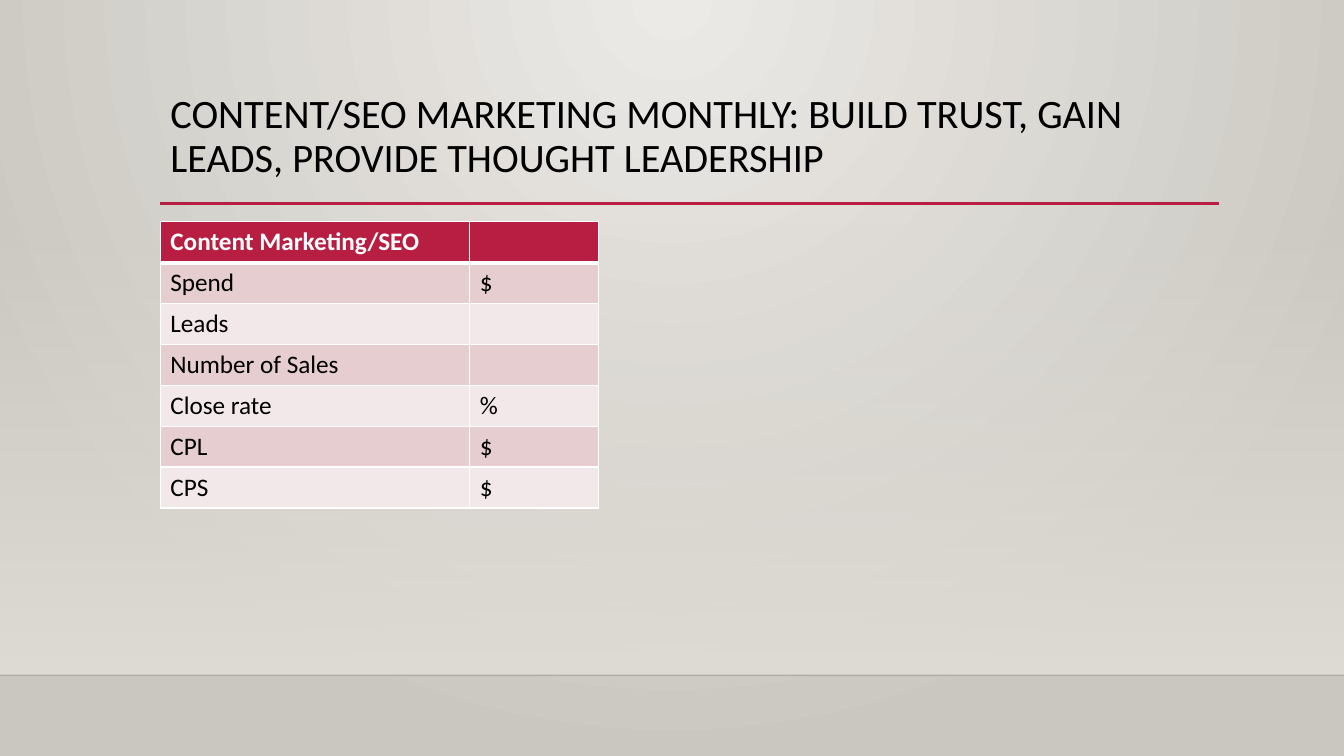
from dataclasses import dataclass

from lxml import etree
from pptx import Presentation
from pptx.dml.color import RGBColor as RGB
from pptx.enum.shapes import MSO_CONNECTOR as CONNECTOR, MSO_SHAPE as SHAPE
from pptx.enum.text import MSO_ANCHOR as ANCHOR, MSO_AUTO_SIZE as AUTO_SIZE, PP_ALIGN as ALIGN
from pptx.oxml.ns import qn
from pptx.util import Cm, Pt


@dataclass(frozen=True)
class Theme:
    font: str = "Calibri"
    title_size: float = 28.8
    table_size: float = 18
    text: str = "000000"
    white: str = "FFFFFF"
    accent: str = "B71E42"
    bands: tuple = ("F3E8E9", "E6CDCF")
    glow: str = "ECEAE7"
    edge: str = "CAC7C1"
    wall: str = "DFDBD5"
    floor_line: str = "000001"


THEME = Theme()


def set_gradient(fill, *colors):
    fill.gradient()
    for stop, color, position in zip(fill.gradient_stops, colors, (0, 1)):
        stop.color.rgb = RGB.from_string(color)
        stop.position = position


def set_alpha(element, percent):
    """Make the first colour inside element partly transparent."""
    color = next(element.iter(qn("a:srgbClr")))
    etree.SubElement(color, qn("a:alpha"), val=str(percent * 1000))


prs = Presentation()
prs.slide_width, prs.slide_height = Cm(33.87), Cm(19.05)
s = prs.slides.add_slide(prs.slide_layouts[5])

# Background: a glow from the top centre
set_gradient(s.background.fill, THEME.glow, THEME.edge)
grad = next(s.element.iter(qn("a:gradFill")))
grad.remove(grad.find(qn("a:lin")))
path = etree.SubElement(grad, qn("a:path"), path="circle")
etree.SubElement(path, qn("a:fillToRect"), l="43000", t="0", r="43000", b="100000")

# Wall fading in towards the floor
wall = s.shapes.add_shape(SHAPE.RECTANGLE, 0, Cm(5.61), prs.slide_width, Cm(11.41))
wall.shadow.inherit = False
wall.line.fill.background()
set_gradient(wall.fill, THEME.wall, THEME.wall)
wall.fill.gradient_angle = 270
set_alpha(wall.element.spPr, 0)

# Floor line and title rule
for x1, x2, y, color, width, alpha in (
    (0, 33.87, 17.02, THEME.floor_line, 1, 20),
    (4.04, 30.73, 5.13, THEME.accent, 2.5, 100),
):
    rule = s.shapes.add_connector(CONNECTOR.STRAIGHT, Cm(x1), Cm(y), Cm(x2), Cm(y))
    rule.line.color.rgb = RGB.from_string(color)
    rule.line.width = Pt(width)
    set_alpha(rule.element.spPr, alpha)
    etree.SubElement(rule.element.spPr, qn("a:effectLst"))

# Title
title = s.shapes.title
title.element.getparent().append(title.element)
title.left, title.top, title.width, title.height = Cm(4.04), Cm(2.24), Cm(26.67), Cm(2.92)
tf = title.text_frame
tf.text = "CONTENT/SEO MARKETING MONTHLY: BUILD TRUST, GAIN LEADS, PROVIDE THOUGHT LEADERSHIP"
tf.word_wrap = True
tf.auto_size = AUTO_SIZE.NONE
tf.vertical_anchor = ANCHOR.TOP
p = tf.paragraphs[0]
p.alignment = ALIGN.LEFT
p.line_spacing = 0.9
p.font.name, p.font.size = THEME.font, Pt(THEME.title_size)
p.font.color.rgb = RGB.from_string(THEME.text)

# Monthly figures
ROWS = (
    ("Content Marketing/SEO", ""),
    ("Spend", "$"),
    ("Leads", ""),
    ("Number of Sales", ""),
    ("Close rate", "%"),
    ("CPL", "$"),
    ("CPS", "$"),
)
COLUMN_WIDTHS = (7.8, 3.24)
ROW_HEIGHT = 1.03
table = s.shapes.add_table(
    len(ROWS), len(COLUMN_WIDTHS), Cm(4.04), Cm(5.59),
    Cm(sum(COLUMN_WIDTHS)), Cm(ROW_HEIGHT * len(ROWS)),
).table
for column, width in zip(table.columns, COLUMN_WIDTHS):
    column.width = Cm(width)

for i, row in enumerate(ROWS):
    header = i == 0
    fill = THEME.accent if header else THEME.bands[i % 2]
    table.rows[i].height = Cm(ROW_HEIGHT)
    for j, text in enumerate(row):
        cell = table.cell(i, j)
        tcPr = cell._tc.get_or_add_tcPr()
        for side in "LRTB":
            thick = (header and side == "B") or (i == 1 and side == "T")
            ln = etree.SubElement(tcPr, qn(f"a:ln{side}"), w=str(Pt(3 if thick else 1)))
            solid = etree.SubElement(ln, qn("a:solidFill"))
            etree.SubElement(solid, qn("a:srgbClr"), val=THEME.white)
        cell.fill.solid()
        cell.fill.fore_color.rgb = RGB.from_string(fill)
        cell.text = text
        font = cell.text_frame.paragraphs[0].font
        font.name, font.size, font.bold = THEME.font, Pt(THEME.table_size), header
        font.color.rgb = RGB.from_string(THEME.white if header else THEME.text)

prs.save("out.pptx")
